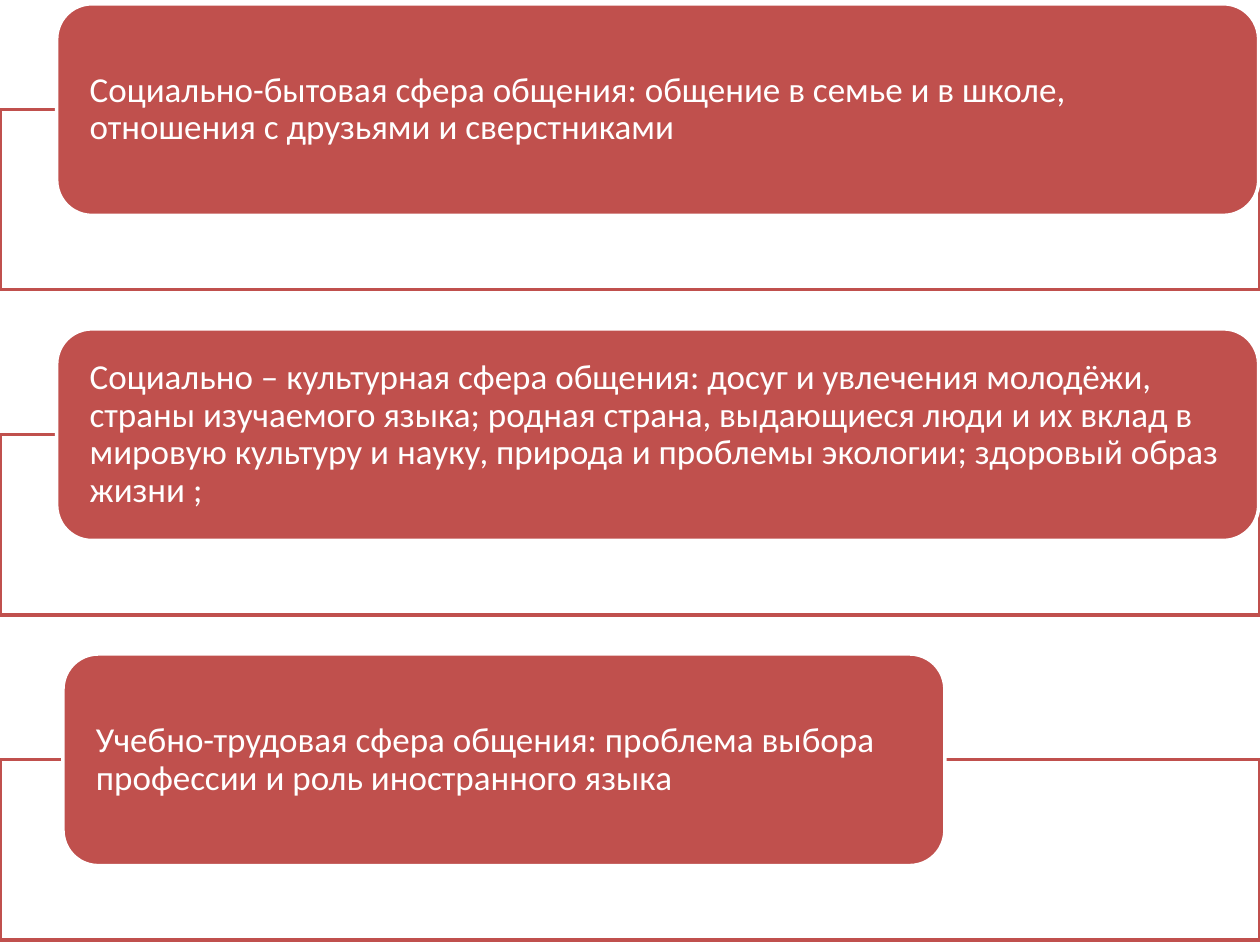
from pptx import Presentation
from pptx.dml.color import RGBColor
from pptx.enum.shapes import MSO_SHAPE as Kind
from pptx.enum.text import MSO_ANCHOR as Anchor, PP_ALIGN as Align
from pptx.oxml.ns import qn
from pptx.util import Inches, Pt
from lxml.etree import SubElement

RED, WHITE = "C0504D", "FFFFFF"


def paint(form, color):
    form.solid()
    form.fore_color.rgb = RGBColor.from_string(color)


def block(kind, left, top, width, height, fill, line):
    shape = slide.shapes.add_shape(
        kind, Inches(left), Inches(top), Inches(width), Inches(height))
    shape.shadow.inherit = False
    paint(shape.fill, fill)
    paint(shape.line.fill, line)
    shape.line.width = Pt(2)
    return shape


deck = Presentation()
deck.slide_width, deck.slide_height = Inches(10), Inches(7.5)
slide = deck.slides.add_slide(deck.slide_layouts[6])

topics = [
    (0.45, 9.54, "Социально-бытовая сфера общения: общение в семье и в школе, "
     "отношения с друзьями и сверстниками"),
    (0.45, 9.54, "Социально – культурная сфера общения: досуг и увлечения молодёжи, "
     "страны изучаемого языка; родная страна, выдающиеся люди и их вклад в "
     "мировую культуру и науку, природа и проблемы экологии; здоровый образ жизни ;"),
    (0.5, 7, "Учебно-трудовая сфера общения: проблема выбора профессии "
     "и роль иностранного языка"),
]
step, high = 2.58, 1.68

for row, (left, width, text) in enumerate(topics):
    top = 0.03 + row * step
    frame = block(Kind.RECTANGLE, 0, top + high / 2, 10, 1.43, WHITE, RED)
    tint = frame.fill._xPr.find(qn("a:solidFill"))[0]
    SubElement(tint, qn("a:alpha")).set("val", "90000")

    label = block(Kind.ROUNDED_RECTANGLE, left, top, width, high, RED, WHITE)
    body = label.text_frame
    body.text = text
    body.word_wrap = True
    body.vertical_anchor = Anchor.MIDDLE
    body.margin_left = body.margin_right = Inches(0.18)
    body.margin_top = body.margin_bottom = 0
    para = body.paragraphs[0]
    para.alignment = Align.LEFT
    para.line_spacing = 0.9
    font = para.runs[0].font
    font.name, font.size = "Calibri", Pt(20)
    paint(font.fill, WHITE)

deck.save("out.pptx")
